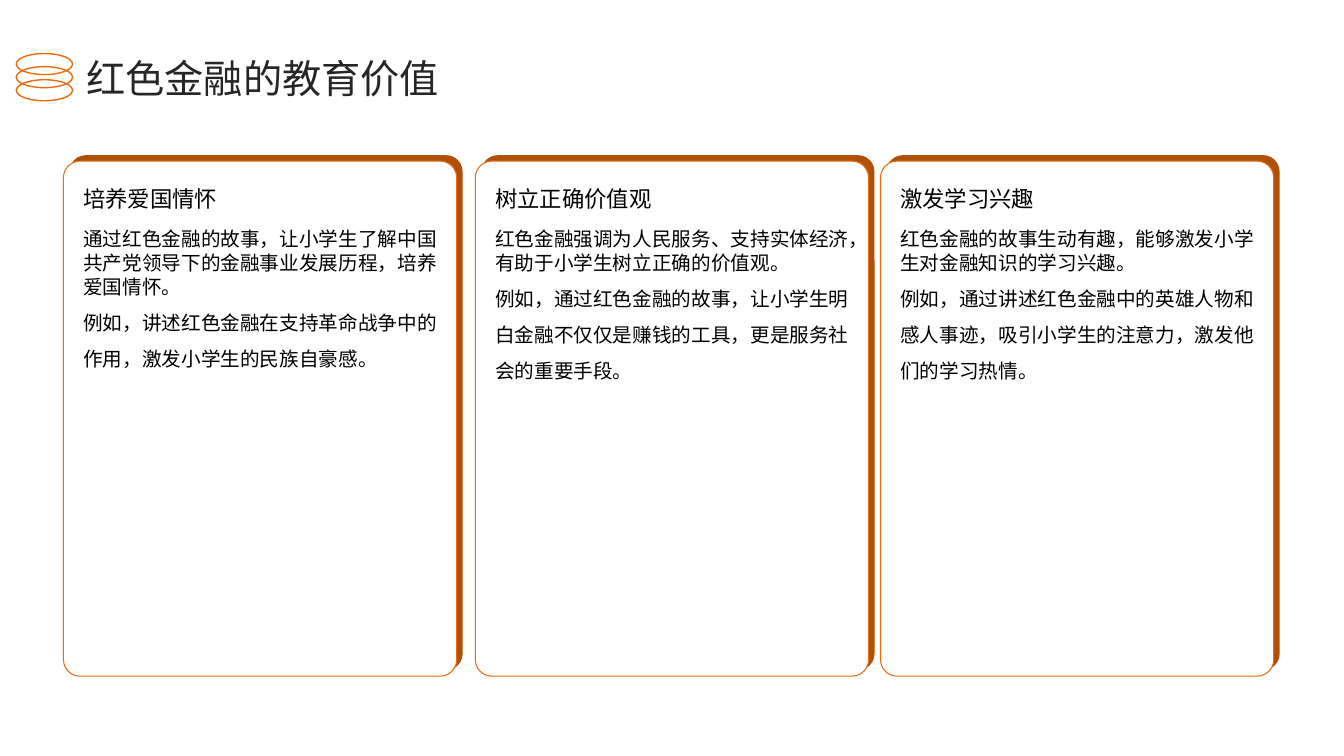
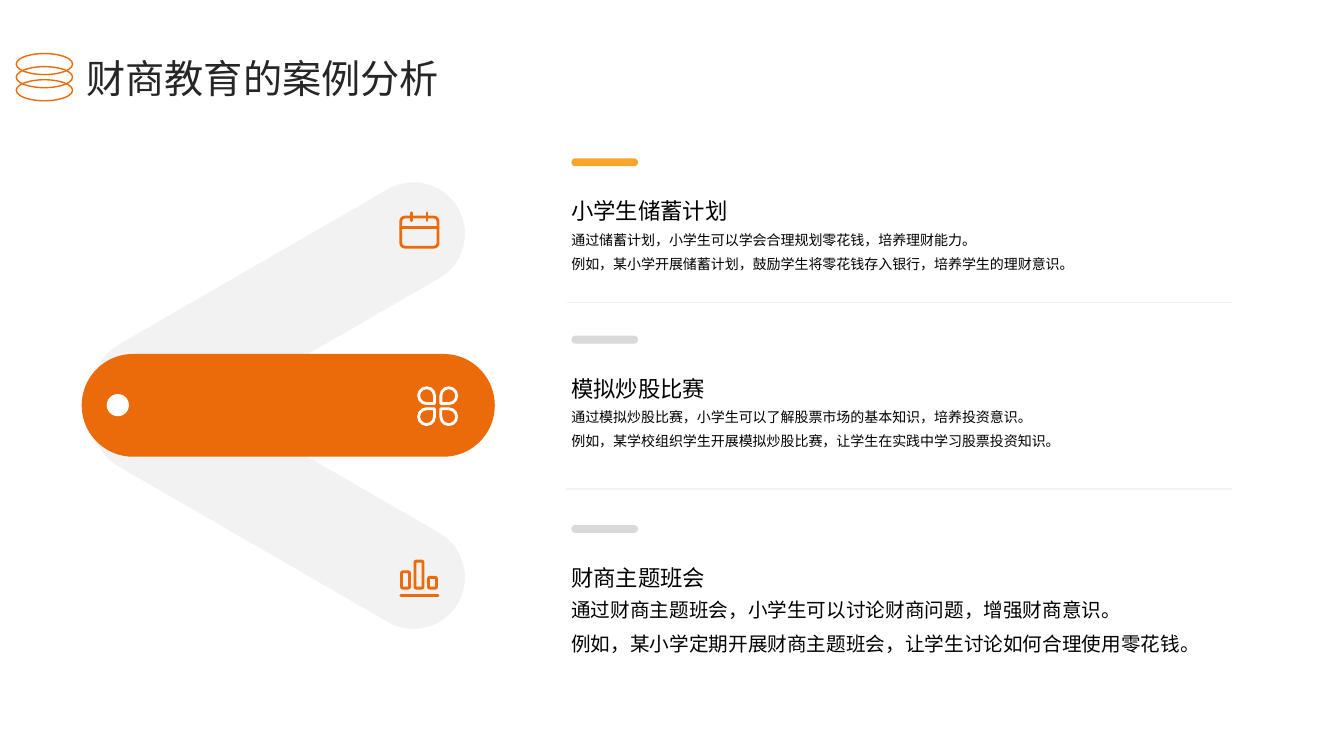
import dataclasses

import lxml.etree
import pptx
import pptx.dml.color
import pptx.enum.shapes
import pptx.enum.text
import pptx.oxml.ns
import pptx.util

Cm, Pt = pptx.util.Cm, pptx.util.Pt
SHAPE = pptx.enum.shapes.MSO_SHAPE
ANCHOR = pptx.enum.text.MSO_ANCHOR
qn = pptx.oxml.ns.qn


@dataclasses.dataclass(frozen=True)
class Theme:
    font: str = "Noto Sans CJK SC"
    orange: str = "EB6B0B"
    dark_orange: str = "B05008"
    amber: str = "F8A52C"
    white: str = "FFFFFF"
    pale: str = "F2F2F2"
    grey: str = "D9D9D9"
    title_ink: str = "262626"
    ink: str = "000000"
    title_size: float = 28
    heading_size: float = 16
    body_size: float = 14
    small_size: float = 10
    icon_stroke: float = 2


THEME = Theme()

VALUES_TITLE = "红色金融的教育价值"
# left edge in cm, heading, body paragraphs
VALUES = [
    (1.6, "培养爱国情怀", [
        "通过红色金融的故事，让小学生了解中国共产党领导下的金融事业发展历程，培养爱国情怀。",
        "例如，讲述红色金融在支持革命战争中的作用，激发小学生的民族自豪感。"]),
    (11.98, "树立正确价值观", [
        "红色金融强调为人民服务、支持实体经济，有助于小学生树立正确的价值观。",
        "例如，通过红色金融的故事，让小学生明白金融不仅仅是赚钱的工具，更是服务社会的重要手段。"]),
    (22.19, "激发学习兴趣", [
        "红色金融的故事生动有趣，能够激发小学生对金融知识的学习兴趣。",
        "例如，通过讲述红色金融中的英雄人物和感人事迹，吸引小学生的注意力，激发他们的学习热情。"]),
]

CASES_TITLE = "财商教育的案例分析"
# top edge in cm, marker colour, body size, heading, body paragraphs
CASES = [
    (3.99, THEME.amber, THEME.small_size, "小学生储蓄计划", [
        "通过储蓄计划，小学生可以学会合理规划零花钱，培养理财能力。",
        "例如，某小学开展储蓄计划，鼓励学生将零花钱存入银行，培养学生的理财意识。"]),
    (8.46, THEME.grey, THEME.small_size, "模拟炒股比赛", [
        "通过模拟炒股比赛，小学生可以了解股票市场的基本知识，培养投资意识。",
        "例如，某学校组织学生开展模拟炒股比赛，让学生在实践中学习股票投资知识。"]),
    (13.23, THEME.grey, THEME.body_size, "财商主题班会", [
        "通过财商主题班会，小学生可以讨论财商问题，增强财商意识。",
        "例如，某小学定期开展财商主题班会，让学生讨论如何合理使用零花钱。"]),
]
DIVIDERS = [7.62, 12.32]


def rgb(code):
    return pptx.dml.color.RGBColor.from_string(code)


def write(frame, paragraphs, size=THEME.body_size, color=THEME.ink,
          anchor=ANCHOR.TOP, spacing=(1.1,)):
    """Fill a text frame; spacing holds one line spacing per paragraph."""
    frame.word_wrap = True
    frame.auto_size = pptx.enum.text.MSO_AUTO_SIZE.NONE
    frame.vertical_anchor = anchor
    frame.margin_left = frame.margin_right = frame.margin_top = frame.margin_bottom = 0
    for index, (text, leading) in enumerate(zip(paragraphs, spacing)):
        paragraph = frame.add_paragraph() if index else frame.paragraphs[0]
        paragraph.alignment = pptx.enum.text.PP_ALIGN.LEFT
        paragraph.line_spacing = leading
        paragraph.space_before = paragraph.space_after = Pt(0)
        run = paragraph.add_run()
        run.text = text
        run.font.size = Pt(size)
        run.font.color.rgb = rgb(color)
        run.font.name = THEME.font
        east_asian = lxml.etree.SubElement(run._r.get_or_add_rPr(), qn("a:ea"))
        east_asian.set("typeface", THEME.font)


def add_text(slide, box, paragraphs, **formatting):
    label = slide.shapes.add_textbox(*map(Cm, box))
    write(label.text_frame, paragraphs, **formatting)


def add_body(slide, box, paragraphs, size, leading):
    """The opening paragraph is set tight, the example that follows is loose."""
    tight = 1.22 * size
    add_text(slide, box, paragraphs, size=size,
             spacing=(Pt(tight), Pt(tight * leading)))


def add_figure(parent, preset, box, fill=None, line=None, width=1, radius=None, turn=0):
    figure = parent.shapes.add_shape(preset, *map(Cm, box))
    figure.shadow.inherit = False
    figure.rotation = turn
    if radius is not None:
        figure.adjustments[0] = radius
    if fill:
        figure.fill.solid()
        figure.fill.fore_color.rgb = rgb(fill)
    else:
        figure.fill.background()
    if line:
        figure.line.color.rgb = rgb(line)
        figure.line.width = Pt(width)
    else:
        figure.line.fill.background()


def add_line(parent, start, end, color, width):
    stroke = parent.shapes.add_connector(
        pptx.enum.shapes.MSO_CONNECTOR.STRAIGHT, *map(Cm, start + end))
    stroke.line.color.rgb = rgb(color)
    stroke.line.width = Pt(width)
    stroke.line._get_or_add_ln().set("cap", "rnd")
    lxml.etree.SubElement(stroke._element.spPr, qn("a:effectLst"))


def add_titled_slide(deck, title):
    slide = deck.slides.add_slide(deck.slide_layouts[5])
    heading = slide.shapes.title
    heading.left, heading.top, heading.width, heading.height = map(
        Cm, (2.18, 1.24, 29.64, 1.3))
    write(heading.text_frame, [title], size=THEME.title_size,
          color=THEME.title_ink, anchor=ANCHOR.MIDDLE)
    rings = slide.shapes.add_group_shape()
    for level in (2, 1, 0):
        add_figure(rings, SHAPE.OVAL, (0.41, 1.35 + 0.33 * level, 1.42, 0.53),
                   line=THEME.orange)
    return slide


def add_value_card(slide, left, heading, body):
    top, width, height, offset = 4.06, 9.91, 12.98, 0.15
    add_figure(slide, SHAPE.ROUNDED_RECTANGLE,
               (left + offset, top - offset, width, height),
               fill=THEME.dark_orange, radius=0.042)
    add_figure(slide, SHAPE.ROUNDED_RECTANGLE, (left, top, width, height),
               fill=THEME.white, line=THEME.orange, width=0.75, radius=0.042)
    text_left, text_width = left + 0.5, 8.92
    add_text(slide, (text_left, 4.24, text_width, 1.47), [heading],
             size=THEME.heading_size, anchor=ANCHOR.MIDDLE)
    add_body(slide, (text_left, 5.72, text_width, 11.15), body,
             THEME.body_size, 1.5)


def add_case(slide, top, marker, size, heading, body):
    left, width = 14.4, 16.56
    add_figure(slide, SHAPE.ROUNDED_RECTANGLE, (left, top, 1.68, 0.2),
               fill=marker, radius=0.5)
    add_text(slide, (left, top + 0.54, width, 1.12), [heading],
             size=THEME.heading_size, anchor=ANCHOR.BOTTOM)
    add_body(slide, (left, top + 1.83, width, 1.73), body, size, 1.4)


def add_fan(slide):
    for left, top, turn, color in [(1.83, 11.3, 30, THEME.pale),
                                   (1.83, 6.55, -30, THEME.pale),
                                   (2.06, 8.92, 0, THEME.orange)]:
        add_figure(slide, SHAPE.ROUNDED_RECTANGLE, (left, top, 10.41, 2.59),
                   fill=color, radius=0.5, turn=turn)
    add_figure(slide, SHAPE.OVAL, (2.69, 9.93, 0.56, 0.56), fill=THEME.white)


def add_calendar_icon(slide):
    icon = slide.shapes.add_group_shape()
    stroke = THEME.icon_stroke
    add_figure(icon, SHAPE.ROUNDED_RECTANGLE, (10.1, 5.47, 0.94, 0.76),
               line=THEME.orange, width=stroke, radius=0.14)
    add_line(icon, (10.1, 5.73), (11.04, 5.73), THEME.orange, stroke)
    for ring in (10.38, 10.76):
        add_line(icon, (ring, 5.36), (ring, 5.56), THEME.orange, stroke)


def add_petals_icon(slide):
    icon = slide.shapes.add_group_shape()
    for left, top, turn in [(10.55, 9.77, 90), (11.11, 9.77, 180),
                            (10.55, 10.3, 0), (11.11, 10.3, 270)]:
        add_figure(icon, SHAPE.TEAR, (left, top, 0.4, 0.4), line=THEME.white,
                   width=THEME.icon_stroke, turn=turn)


def add_bars_icon(slide):
    icon = slide.shapes.add_group_shape()
    bottom = 14.82
    for index, height in enumerate((0.41, 0.68, 0.27)):
        add_figure(icon, SHAPE.ROUNDED_RECTANGLE,
                   (10.12 + 0.34 * index, bottom - height, 0.2, height),
                   line=THEME.orange, width=THEME.icon_stroke, radius=0.15)
    add_line(icon, (10.1, 15), (11.04, 15), THEME.orange, THEME.icon_stroke)


def main():
    deck = pptx.Presentation()
    deck.slide_width, deck.slide_height = Cm(33.87), Cm(19.05)

    values = add_titled_slide(deck, VALUES_TITLE)
    for card in VALUES:
        add_value_card(values, *card)

    cases = add_titled_slide(deck, CASES_TITLE)
    for case in CASES:
        add_case(cases, *case)
    for height in DIVIDERS:
        add_line(cases, (14.27, height), (31.04, height), THEME.pale, 1)
    add_fan(cases)
    add_calendar_icon(cases)
    add_petals_icon(cases)
    add_bars_icon(cases)

    deck.save("out.pptx")


if __name__ == "__main__":
    main()
